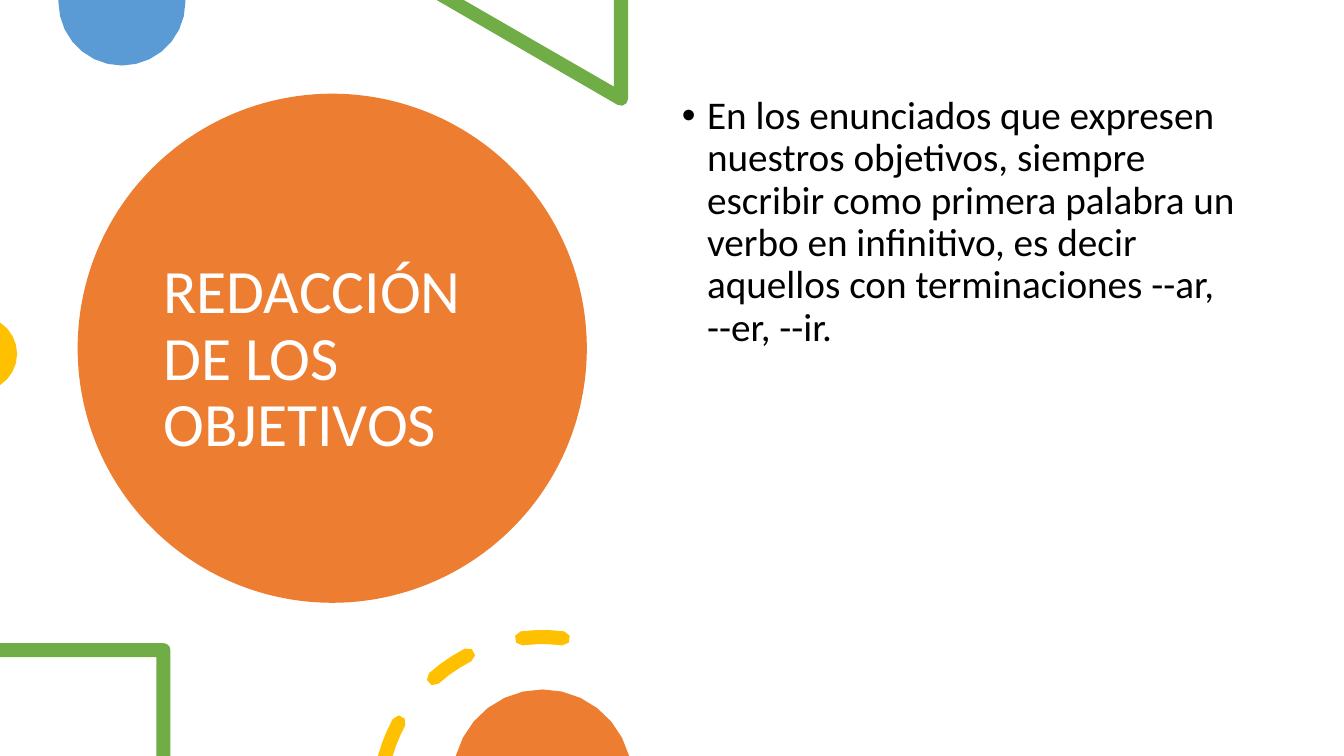
import math
from collections import namedtuple

from pptx import Presentation
from pptx import util as u
from pptx.dml.color import RGBColor
from pptx.enum import shapes, text
from pptx.oxml import parse_xml
from pptx.oxml.ns import nsdecls

ORANGE = RGBColor(0xED, 0x7D, 0x31)
BLUE = RGBColor(0x5B, 0x9B, 0xD5)
GREEN = RGBColor(0x70, 0xAD, 0x47)
YELLOW = RGBColor(0xFF, 0xC0, 0x00)
WHITE = RGBColor(0xFF, 0xFF, 0xFF)
BLACK = RGBColor(0, 0, 0)

Box = namedtuple("Box", "left top width height")
SLIDE = Box(0, 0, 13.33, 7.5)
LEFT_HALF = Box(0, 0, SLIDE.width / 2, SLIDE.height)
RIGHT_HALF = Box(SLIDE.width / 2, 0, SLIDE.width / 2, SLIDE.height)
CORNER = 0.07
BAND = 2 * CORNER


def arc(center_x, center_y, radius, start, end, steps=3):
    """Return points along an arc, with angles in degrees clockwise from the top."""
    angles = [math.radians(start + (end - start) * i / steps) for i in range(steps + 1)]
    return [(center_x + radius * math.sin(a), center_y - radius * math.cos(a)) for a in angles]


def paint(shape, color):
    """Give a shape a plain fill without line or shadow."""
    shape.fill.solid()
    shape.fill.fore_color.rgb = color
    shape.line.fill.background()
    shape.shadow.inherit = False


def add_outline(slide, box, color, *contours):
    """Draw closed contours measured from the corner of the box."""
    builder = None
    for contour in contours:
        points = [(u.Inches(box.left + x), u.Inches(box.top + y)) for x, y in contour]
        if builder is None:
            builder = slide.shapes.build_freeform(*points[0])
        else:
            builder.move_to(*points[0])
        builder.add_line_segments(points[1:], close=True)
    paint(builder.convert_to_shape(), color)


def place(shape, box):
    """Move and size a shape to a box."""
    shape.left, shape.top, shape.width, shape.height = map(u.Inches, box)


def write(shape, words, *, size, color, anchor, space_before=0, bullet=False):
    """Set one formatted paragraph in a shape."""
    frame = shape.text_frame
    frame.word_wrap = True
    frame.auto_size = text.MSO_AUTO_SIZE.NONE
    frame.vertical_anchor = anchor
    paragraph = frame.paragraphs[0]
    paragraph.alignment = text.PP_ALIGN.LEFT
    paragraph.line_spacing = 0.9
    paragraph.space_before = u.Pt(space_before)
    run = paragraph.add_run()
    run.text = words
    run.font.name = "Calibri"
    run.font.size = u.Pt(size)
    run.font.color.rgb = color
    if bullet:
        properties = paragraph._p.get_or_add_pPr()
        properties.set("marL", str(u.Inches(0.25)))
        properties.set("indent", str(u.Inches(-0.25)))
        properties.append(parse_xml(f'<a:buFont {nsdecls("a")} typeface="Arial"/>'))
        properties.append(parse_xml(f'<a:buChar {nsdecls("a")} char="•"/>'))


def add_title(slide, box):
    """Place the title over its orange circle."""
    title = slide.shapes.title
    diameter = 5.05
    circle = slide.shapes.add_shape(
        shapes.MSO_SHAPE.OVAL, u.Inches(box.left + 0.77), u.Inches(box.top + 0.93),
        u.Inches(diameter), u.Inches(diameter))
    paint(circle, ORANGE)
    title.element.addprevious(circle.element)
    place(title, Box(box.left + 1.52, box.top + 1.35, 3.54, 4.45))
    write(title, "REDACCIÓN DE LOS OBJETIVOS", size=44, color=WHITE,
          anchor=text.MSO_ANCHOR.MIDDLE)


def add_top_decoration(slide, box):
    """Draw the discs and the triangle that the upper and left edges cut off."""
    add_outline(slide, box, BLUE,
                [(0.58, 0), (1.84, 0), *arc(1.21, 0.02, 0.63, 90, 270, steps=14)])
    right = 6.23
    triangle = [(right, 0), *arc(right - CORNER, 0.98, CORNER, 90, 210),
                (4.33, 0), (4.6, 0), (right - BAND, 0.86), (right - BAND, 0)]
    add_outline(slide, box, GREEN, triangle)
    add_outline(slide, box, YELLOW, arc(-0.2, 3.51, 0.37, 32.72, 147.28, steps=8))


def dash(center_x, center_y, radius, start, end, edge):
    """Return the contour of a curved dash with round ends, cut off at a lower edge."""
    outer, inner = radius + CORNER, radius - CORNER
    outer_cut, inner_cut = (-math.degrees(math.acos((center_y - edge) / r))
                            for r in (outer, inner))
    start_x, start_y = arc(center_x, center_y, radius, start, end)[0]
    end_x, end_y = arc(center_x, center_y, radius, start, end)[-1]
    contour = (arc(center_x, center_y, outer, max(start, outer_cut), end)
               + arc(end_x, end_y, CORNER, end, end + 180)[1:]
               + arc(center_x, center_y, inner, end, max(start, inner_cut))[1:])
    if start > outer_cut:
        contour += arc(start_x, start_y, CORNER, start + 180, start + 360)[1:-1]
    return contour


def add_bottom_decoration(slide, box):
    """Draw the square, the dashed ring and the disc that the lower edge cuts off."""
    right, top, bottom = 1.69, 6.38, box.height
    square = [(0, top), *arc(right - CORNER, top + CORNER, CORNER, 0, 90), (right, bottom),
              (right - BAND, bottom), (right - BAND, top + BAND), (0, top + BAND)]
    add_outline(slide, box, GREEN, square)
    center_x, period, half_dash = 5.38, 34.4, 7.3
    middles = [-i * period for i in range(3)]
    dashes = [dash(center_x, 7.94, 1.62, middle - half_dash, middle + half_dash, bottom)
              for middle in middles]
    add_outline(slide, box, YELLOW, *dashes)
    add_outline(slide, box, ORANGE, arc(center_x, 7.73, 0.89, -75, 75, steps=12))


def add_body(slide, box):
    """Place the bulleted advice."""
    body = slide.shapes.add_textbox(0, 0, 0, 0)
    place(body, Box(box.left, box.top + 0.9, 5.75, 5.35))
    write(body, "En los enunciados que expresen nuestros objetivos, siempre escribir como "
          "primera palabra un verbo en infinitivo, es decir aquellos con terminaciones "
          "--ar, --er, --ir.", size=28, color=BLACK, anchor=text.MSO_ANCHOR.TOP,
          space_before=10, bullet=True)


def main():
    """Build and save the presentation."""
    presentation = Presentation()
    presentation.slide_width = u.Inches(SLIDE.width)
    presentation.slide_height = u.Inches(SLIDE.height)
    slide = presentation.slides.add_slide(presentation.slide_layouts[5])
    add_title(slide, LEFT_HALF)
    add_top_decoration(slide, LEFT_HALF)
    add_body(slide, RIGHT_HALF)
    add_bottom_decoration(slide, LEFT_HALF)
    presentation.save("out.pptx")


if __name__ == "__main__":
    main()
